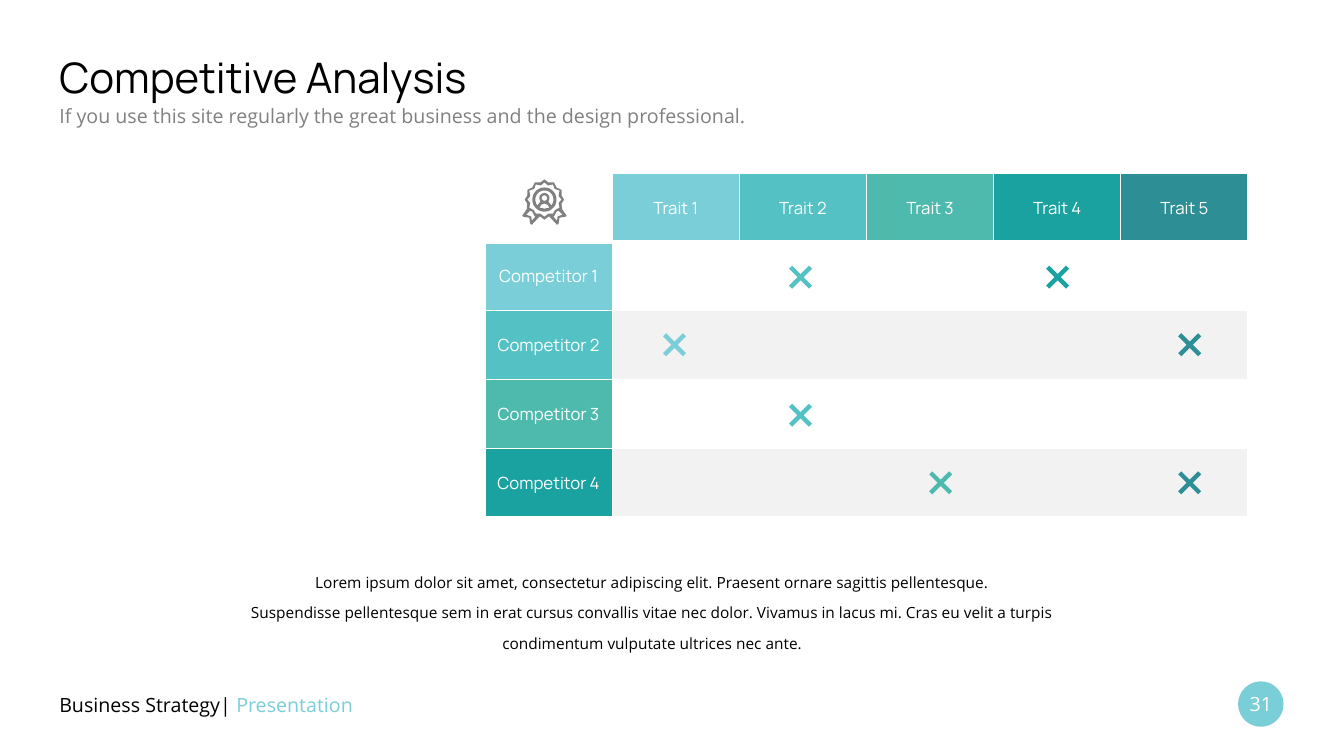
import math

import lxml.etree
import pptx
import pptx.dml.color
import pptx.enum.shapes
import pptx.enum.text
import pptx.oxml.ns
import pptx.util

Inches = pptx.util.Inches
ALIGN = pptx.enum.text.PP_ALIGN
ANCHOR = pptx.enum.text.MSO_ANCHOR
SHAPE = pptx.enum.shapes.MSO_SHAPE

# Content
COLOURS = {
    "sky": "7ACED8", "aqua": "54C1C4", "mint": "4EBAAD", "teal": "1AA2A0",
    "petrol": "2D8E95", "white": "FFFFFF", "band": "F2F2F2",
    "grey": "808080", "black": "000000",
}
SERIES = ["sky", "aqua", "mint", "teal", "petrol"]
TRAITS = ["Trait 1", "Trait 2", "Trait 3", "Trait 4", "Trait 5"]
COMPETITORS = ["Competitor 1", "Competitor 2", "Competitor 3", "Competitor 4"]
MARKS = [(0, 1), (0, 3), (1, 0), (1, 4), (2, 1), (3, 2), (3, 4)]  # competitor, trait
BODY = [
    "Lorem ipsum dolor sit amet, consectetur adipiscing elit. Praesent ornare sagittis pellentesque.",
    "Suspendisse pellentesque sem in erat cursus convallis vitae nec dolor. "
    "Vivamus in lacus mi. Cras eu velit a turpis",
    "condimentum vulputate ultrices nec ante.",
]

# Layout, in inches
TABLE_LEFT, TABLE_TOP, TABLE_WIDTH, TABLE_HEIGHT = 4.81, 1.72, 7.57, 3.41
MARK_LEFTS = [6.5, 7.75, 9.14, 10.3, 11.61]
MARK_TOPS = [2.56, 3.23, 3.93, 4.6]
MARK_SIZE = 0.38

# Award badge, in hundredths of an inch from its top centre; right halves only
BADGE_LEFT, BADGE_TOP = 5.4, 1.78
BADGE_EDGE = [(0, 0), (4, 3), (9.5, 3), (12, 8), (17, 10.5), (17, 16), (19.5, 20),
              (17, 24), (17.5, 29.5), (22, 36), (21, 37), (15, 38), (14, 44),
              (12.5, 45), (5, 37), (4, 37), (0, 40)]
BADGE_INSIDE = [(0, 3), (3.5, 6), (8.5, 5), (10.2, 9.5), (15, 11), (14, 16.5), (17, 20),
                (14, 23.5), (15, 28), (10.5, 30.5), (8.5, 34), (4, 34), (0, 37)]
RIBBON = [(15, 36), (13, 37), (12.5, 41), (9, 37), (10, 36), (12, 32), (14, 31), (18, 35)]
SHOULDERS = [(0, 24), (3, 25), (5, 28), (0, 29)]


def colour(name):
    return pptx.dml.color.RGBColor.from_string(COLOURS[name])


def paint(shape, name):
    shape.shadow.inherit = False
    shape.fill.solid()
    shape.fill.fore_color.rgb = colour(name)
    shape.line.fill.background()


def style(span, size, name, font="Open Sans"):
    span.font.size = pptx.util.Pt(size)
    span.font.name = font
    span.font.color.rgb = colour(name)


def add_text(place, lines, size, name, font="Open Sans", align=ALIGN.LEFT,
             anchor=ANCHOR.MIDDLE, spacing=None):
    box = page.shapes.add_textbox(*map(Inches, place))
    frame = box.text_frame
    frame.word_wrap = True
    frame.vertical_anchor = anchor
    frame.text = "\n".join(lines)
    for para in frame.paragraphs:
        para.alignment = align
        if spacing:
            para.line_spacing = pptx.util.Pt(spacing)
        style(para.runs[0], size, name, font)
    return frame


def fill_cell(cell, fill, text="", bottom=1):
    properties = cell._tc.get_or_add_tcPr()
    for side, points in (("L", 1), ("R", 1), ("T", 1), ("B", bottom)):
        edge = lxml.etree.SubElement(properties, pptx.oxml.ns.qn("a:ln" + side),
                                     w=str(pptx.util.Pt(points)))
        solid = lxml.etree.SubElement(edge, pptx.oxml.ns.qn("a:solidFill"))
        lxml.etree.SubElement(solid, pptx.oxml.ns.qn("a:srgbClr"), val=COLOURS["white"])
    cell.fill.solid()
    cell.fill.fore_color.rgb = colour(fill)
    cell.vertical_anchor = ANCHOR.MIDDLE
    if text:
        para = cell.text_frame.paragraphs[0]
        para.text = text
        para.alignment = ALIGN.CENTER
        style(para.runs[0], 12, "white", "Manrope")


def mirror(points):
    return [(-x, y) for x, y in reversed(points)]


def arc(middle, radius, start=0, end=360):
    angles = [math.radians(start + (end - start) * step / 36) for step in range(37)]
    return [(radius * math.cos(a), middle + radius * math.sin(a)) for a in angles]


deck = pptx.Presentation()
deck.slide_width, deck.slide_height = Inches(13.33), Inches(7.5)
page = deck.slides.add_slide(deck.slide_layouts[6])

# Page number disc
disc = page.shapes.add_shape(SHAPE.OVAL, *map(Inches, (12.28, 6.76, 0.45, 0.45)))
paint(disc, "sky")

# Comparison table
table = page.shapes.add_table(
    len(COMPETITORS) + 1, len(TRAITS) + 1,
    *map(Inches, (TABLE_LEFT, TABLE_TOP, TABLE_WIDTH, TABLE_HEIGHT))).table
table.first_row = table.horz_banding = False
for column in table.columns:
    column.width = Inches(TABLE_WIDTH / len(table.columns))
fill_cell(table.cell(0, 0), "white", bottom=3)
for index, trait in enumerate(TRAITS):
    fill_cell(table.cell(0, index + 1), SERIES[index], trait, bottom=3)
for index, competitor in enumerate(COMPETITORS):
    row = index + 1
    fill_cell(table.cell(row, 0), SERIES[index], competitor)
    table.cell(row, 1).merge(table.cell(row, len(TRAITS)))
    for column in range(1, len(TRAITS) + 1):
        fill_cell(table.cell(row, column), "band" if index % 2 else "white")

# Title, subtitle, body and footer
add_text((0.49, 0.43, 12.35, 0.66), ["Competitive Analysis"], 30, "black", "Manrope")
footer = add_text((0.49, 6.79, 3.5, 0.4), ["Business Strategy| "], 14, "black")
span = footer.paragraphs[0].add_run()
span.text = "Presentation"
style(span, 14, "sky")
add_text((12.21, 6.87, 0.59, 0.22), ["31"], 14, "white", align=ALIGN.CENTER)
add_text((0.49, 0.98, 12.35, 0.34),
         ["If you use this site regularly the great business and the design professional."],
         14, "grey", anchor=ANCHOR.TOP)
add_text((1.72, 5.51, 9.5, 0.99), BODY, 11, "black", align=ALIGN.CENTER,
         anchor=ANCHOR.TOP, spacing=22)

# Crosses
for competitor, trait in MARKS:
    cross = page.shapes.add_shape(
        SHAPE.MATH_MULTIPLY, Inches(MARK_LEFTS[trait]), Inches(MARK_TOPS[competitor]),
        Inches(MARK_SIZE), Inches(MARK_SIZE))
    cross.adjustments[0] = 0.114
    paint(cross, SERIES[trait])

# Award badge
head = arc(18.5, 5, 140, 400)
contours = [half + mirror(half) for half in (BADGE_EDGE, BADGE_INSIDE, SHOULDERS)]
contours += [RIBBON, mirror(RIBBON), arc(20, 12), arc(18.5, 2.7),
             arc(20, 9, 40, -220) + [(-4, 22)] + head + [(4, 22)]]
builder = None
for contour in contours:
    points = [(round(x * 10), round(y * 10)) for x, y in contour]
    if builder is None:
        builder = page.shapes.build_freeform(*points[0], scale=Inches(1) / 1000)
    else:
        builder.move_to(*points[0])
    builder.add_line_segments(points[1:], close=True)
badge = builder.convert_to_shape(Inches(BADGE_LEFT), Inches(BADGE_TOP))
paint(badge, "grey")

deck.save("out.pptx")
